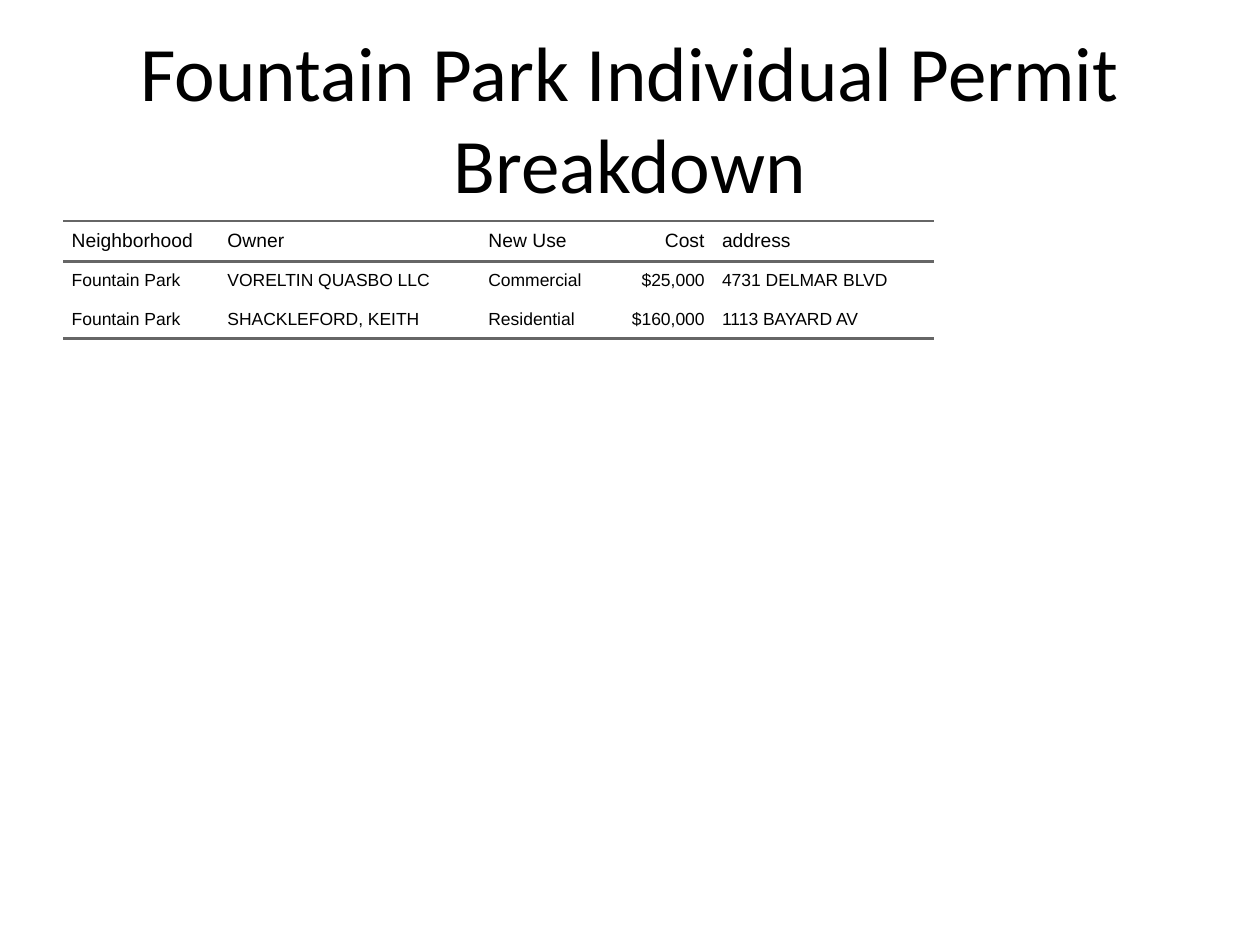
import pptx
import pptx.dml.color
import pptx.enum.text
import pptx.oxml
import pptx.oxml.ns
import pptx.util

Cm = pptx.util.Cm
Pt = pptx.util.Pt
ALIGN = pptx.enum.text.PP_ALIGN
MIDDLE = pptx.enum.text.MSO_ANCHOR.MIDDLE

COLORS = {"text": "000000", "rule": "666666"}
PADDING = Pt(5)
RULE_WIDTH = Pt(1.5)
RULED_EDGES = {0, 1, 3}  # row edges, counted from the top of the table

COLUMNS = [  # heading, width in cm, alignment
    ("Neighborhood", 3.14, ALIGN.LEFT),
    ("Owner", 5.26, ALIGN.LEFT),
    ("New Use", 2.8, ALIGN.LEFT),
    ("Cost", 1.91, ALIGN.RIGHT),
    ("address", 4.44, ALIGN.LEFT),
]
PERMITS = [
    ("Fountain Park", "VORELTIN QUASBO LLC", "Commercial", "$25,000", "4731 DELMAR BLVD"),
    ("Fountain Park", "SHACKLEFORD, KEITH", "Residential", "$160,000", "1113 BAYARD AV"),
]
CELL_FORMAT = {
    "margin_left": 0,
    "margin_right": 0,
    "margin_top": PADDING,
    "margin_bottom": PADDING,
    "vertical_anchor": MIDDLE,
}


def write(paragraph, text, font_name, size, alignment):
    paragraph.alignment = alignment
    run = paragraph.add_run()
    run.text = text
    run.font.name = font_name
    run.font.size = Pt(size)
    run.font.color.rgb = pptx.dml.color.RGBColor.from_string(COLORS["text"])


def add_border(cell, side, ruled):
    """Append one border; sides must come in the order L, R, T, B."""
    if ruled:
        fill = f'<a:solidFill><a:srgbClr val="{COLORS["rule"]}"/></a:solidFill>'
    else:
        fill = "<a:noFill/>"
    namespace = pptx.oxml.ns.nsdecls("a")
    width = RULE_WIDTH if ruled else 0
    cell._tc.get_or_add_tcPr().append(
        pptx.oxml.parse_xml(f'<a:ln{side} {namespace} w="{width}">{fill}</a:ln{side}>')
    )


deck = pptx.Presentation()
deck.slide_width, deck.slide_height = Cm(25.4), Cm(19.05)
slide = deck.slides.add_slide(deck.slide_layouts[6])

heading = slide.shapes.add_textbox(Cm(1.27), Cm(0.76), Cm(22.86), Cm(3.18)).text_frame
heading.word_wrap = True
heading.vertical_anchor = MIDDLE
write(heading.paragraphs[0], "Fountain Park Individual Permit Breakdown", "Calibri", 44, ALIGN.CENTER)

rows = [[name for name, _, _ in COLUMNS], *PERMITS]
permit_frame = slide.shapes.add_table(
    len(rows), len(COLUMNS), Cm(1.27), Cm(4.45), Cm(22.86), Cm(12.57)
)
permits = permit_frame.table
permits.first_row = False
permits.horz_banding = False
for column, (_, width, _) in zip(permits.columns, COLUMNS):
    column.width = Cm(width)

for row_index, values in enumerate(rows):
    permits.rows[row_index].height = Cm(0.64)
    for column_index, value in enumerate(values):
        cell = permits.cell(row_index, column_index)
        for attribute, setting in CELL_FORMAT.items():
            setattr(cell, attribute, setting)
        borders = {
            "L": False,
            "R": False,
            "T": row_index in RULED_EDGES,
            "B": row_index + 1 in RULED_EDGES,
        }
        for side, ruled in borders.items():
            add_border(cell, side, ruled)
        cell.fill.background()

        entry = cell.text_frame.paragraphs[0]
        write(entry, value, "Arial", 11 if row_index == 0 else 10, COLUMNS[column_index][2])
        entry.space_before = entry.space_after = PADDING
        for indent in ("marL", "marR"):
            entry._p.get_or_add_pPr().set(indent, str(PADDING))

permit_frame.width, permit_frame.height = Cm(22.86), Cm(12.57)

deck.save("out.pptx")
